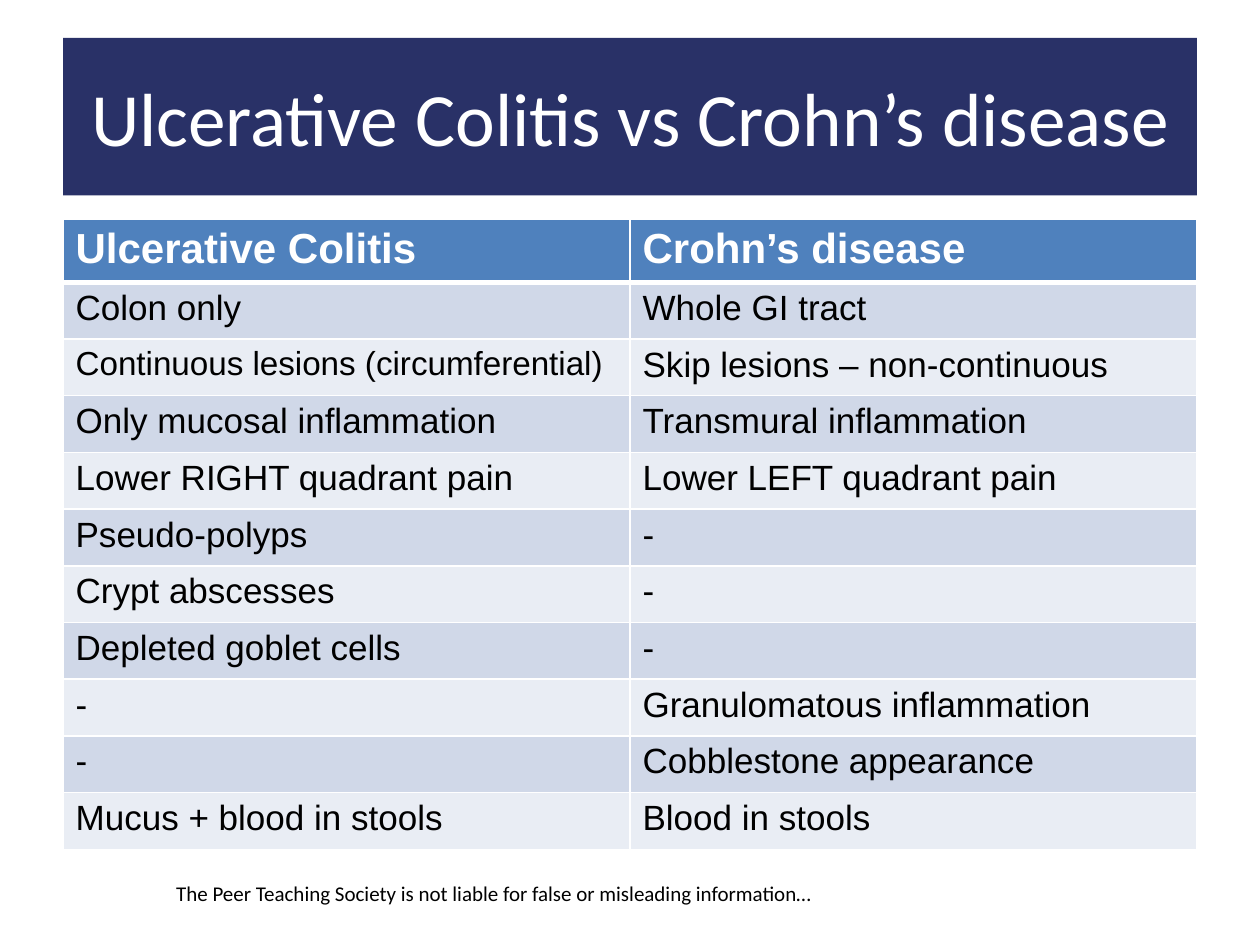
import pptx
import pptx.dml.color
import pptx.enum.text
import pptx.oxml
import pptx.oxml.ns
import pptx.util

Inches = pptx.util.Inches
Pt = pptx.util.Pt
RGBColor = pptx.dml.color.RGBColor
MIDDLE = pptx.enum.text.MSO_ANCHOR.MIDDLE
CENTER = pptx.enum.text.PP_ALIGN.CENTER

NAVY = RGBColor(0x29, 0x31, 0x67)
BLUE = RGBColor(0x4F, 0x81, 0xBD)
BAND_DARK = RGBColor(0xD0, 0xD8, 0xE8)
BAND_LIGHT = RGBColor(0xE9, 0xED, 0xF4)
WHITE = RGBColor(0xFF, 0xFF, 0xFF)
BLACK = RGBColor(0x00, 0x00, 0x00)

TITLE_FONT = {"name": "Calibri", "size": Pt(43), "bold": False, "color": WHITE}
NOTE_FONT = {"name": "Calibri", "size": Pt(12), "color": BLACK}
HEADER_FONT = {"name": "Arial", "size": Pt(24), "bold": True, "color": WHITE}
CELL_FONT = {"name": "Arial", "size": Pt(20), "bold": False, "color": BLACK}
TIGHT_FONT = {**CELL_FONT, "size": Pt(19)}

LONG_ENTRY = "Continuous lesions (circumferential)"
COMPARISON = [
    ("Ulcerative Colitis", "Crohn’s disease"),
    ("Colon only", "Whole GI tract"),
    (LONG_ENTRY, "Skip lesions – non-continuous"),
    ("Only mucosal inflammation", "Transmural inflammation"),
    ("Lower RIGHT quadrant pain", "Lower LEFT quadrant pain"),
    ("Pseudo-polyps", "-"),
    ("Crypt abscesses", "-"),
    ("Depleted goblet cells", "-"),
    ("-", "Granulomatous inflammation"),
    ("-", "Cobblestone appearance"),
    ("Mucus + blood in stools", "Blood in stools"),
]


def write_text(frame, text, font_format):
    """Put one formatted run into the first paragraph of a frame."""
    para = frame.paragraphs[0]
    span = para.add_run()
    span.text = text
    for name, value in font_format.items():
        if name == "color":
            span.font.color.rgb = value
        else:
            setattr(span.font, name, value)
    return para


def set_borders(cell, widths):
    """Draw white cell borders; widths maps a side tag to points."""
    properties = cell._tc.get_or_add_tcPr()
    for index, (side, points) in enumerate(widths.items()):
        line = pptx.oxml.parse_xml(
            f'<a:{side} {pptx.oxml.ns.nsdecls("a")} w="{Pt(points)}">'
            f'<a:solidFill><a:srgbClr val="{WHITE}"/></a:solidFill></a:{side}>'
        )
        properties.insert(index, line)


def add_title(page, text):
    title = page.shapes.title
    place = {"left": 0.5, "top": 0.3, "width": 9, "height": 1.25}
    for name, value in place.items():
        setattr(title, name, Inches(value))
    title.fill.solid()
    title.fill.fore_color.rgb = NAVY
    frame = title.text_frame
    frame_format = {"word_wrap": True, "vertical_anchor": MIDDLE}
    for side in ("left", "top", "right", "bottom"):
        frame_format[f"margin_{side}"] = Inches(0.1)
    for name, value in frame_format.items():
        setattr(frame, name, value)
    write_text(frame, text, TITLE_FONT).alignment = CENTER


def add_comparison_table(page, rows):
    row_height = Inches(0.45)
    table = page.shapes.add_table(
        len(rows), 2, Inches(0.5), Inches(1.74), Inches(9), row_height * len(rows)
    ).table
    for row_index, entries in enumerate(rows):
        table.rows[row_index].height = row_height
        is_header = row_index == 0
        band = BAND_DARK if row_index % 2 else BAND_LIGHT
        # The header's thick rule is shared with the row below it
        widths = {
            "lnL": 1,
            "lnR": 1,
            "lnT": 3 if row_index == 1 else 1,
            "lnB": 3 if is_header else 1,
        }
        for column_index, text in enumerate(entries):
            cell = table.cell(row_index, column_index)
            cell.fill.solid()
            cell.fill.fore_color.rgb = BLUE if is_header else band
            set_borders(cell, widths)
            body_font = TIGHT_FONT if text == LONG_ENTRY else CELL_FONT
            write_text(cell.text_frame, text, HEADER_FONT if is_header else body_font)


def add_disclaimer(page, text):
    box = page.shapes.add_textbox(Inches(1.3), Inches(6.94), Inches(5.54), Inches(0.3))
    box.text_frame.word_wrap = True
    write_text(box.text_frame, text, NOTE_FONT)


def main():
    deck = pptx.Presentation()
    deck.slide_width = Inches(10)
    deck.slide_height = Inches(7.5)
    # Title Only layout
    page = deck.slides.add_slide(deck.slide_layouts[5])

    add_disclaimer(
        page,
        "The Peer Teaching Society is not liable for false or misleading information…",
    )
    add_title(page, "Ulcerative Colitis vs Crohn’s disease")
    add_comparison_table(page, COMPARISON)

    deck.save("out.pptx")


if __name__ == "__main__":
    main()
